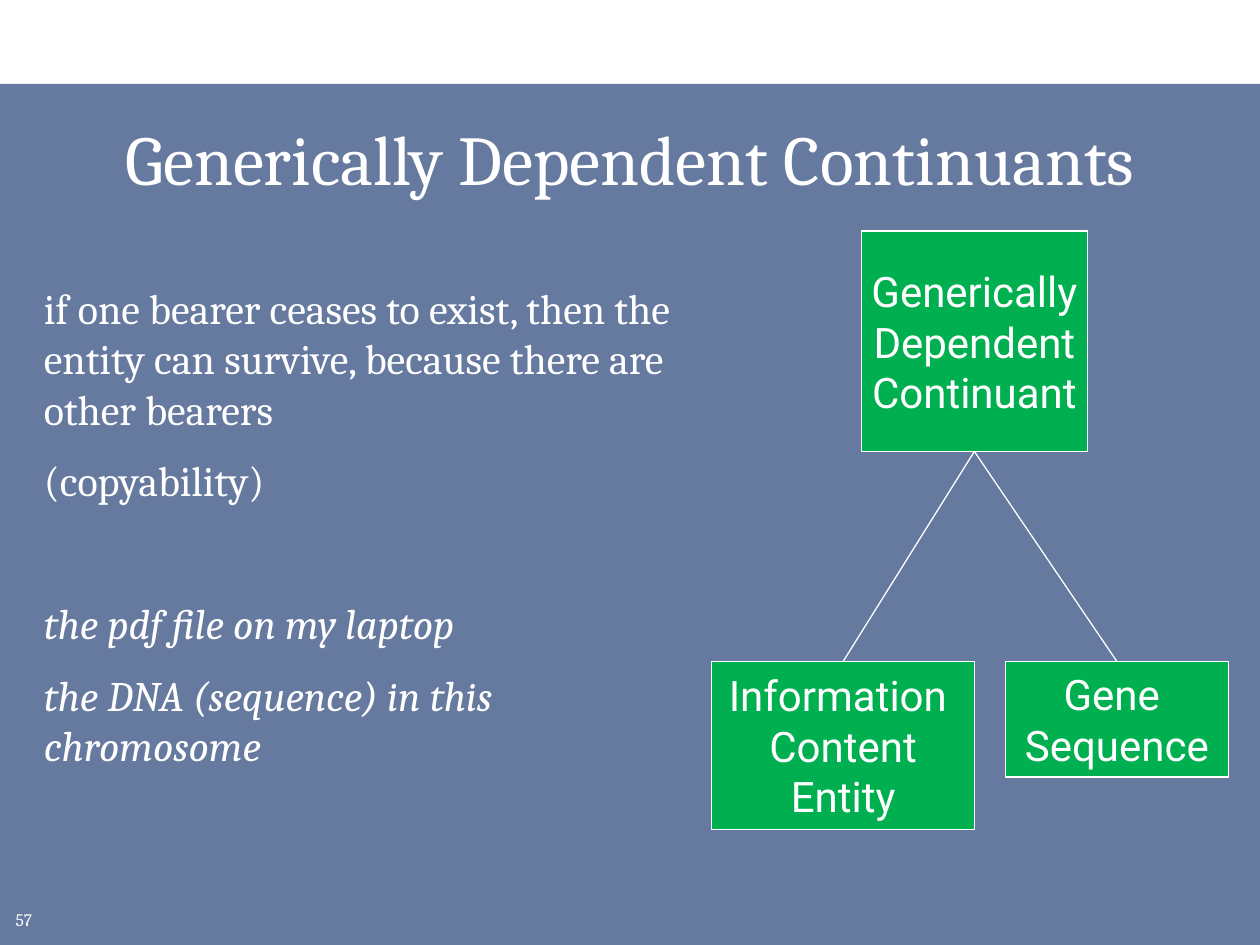
import pptx
import pptx.util
import pptx.dml.color
import pptx.enum.shapes
import pptx.enum.text
import pptx.oxml
import pptx.oxml.ns

COLORS = {"navy": "002060", "green": "00B050", "white": "FFFFFF"}
SERIF, SANS = "Cambria", "Roboto"
COLS, ROWS = 120, 90  # grid of twelfths of an inch
CELL = pptx.util.Inches(1 / 12)
ALIGN = pptx.enum.text.PP_ALIGN
ANCHOR = pptx.enum.text.MSO_ANCHOR
SHAPE = pptx.enum.shapes.MSO_SHAPE


def emu(box):
    """Turn grid units into slide lengths."""
    return [round(v * CELL) for v in box]


def rgb(name):
    return pptx.dml.color.RGBColor.from_string(COLORS[name])


def write(s, lines, size, font, align=ALIGN.LEFT, anchor=ANCHOR.TOP, wrap=True):
    """Fill a shape with one paragraph a line and return the paragraphs."""
    tf = s.text_frame
    tf.text = "\n".join(lines)
    tf.word_wrap = wrap
    tf.vertical_anchor = anchor
    for p in tf.paragraphs:
        p.alignment = align
        for r in p.runs:
            r.font.size = pptx.util.Pt(size)
            r.font.name = font
            r.font.color.rgb = rgb("white")
    return tf.paragraphs


def add_backdrop(slide, box):
    s = slide.shapes.add_shape(SHAPE.RECTANGLE, *emu(box))
    s.shadow.inherit = False
    s.fill.solid()
    s.fill.fore_color.rgb = rgb("navy")
    s.line.fill.background()
    color = s.fill._xPr.find(".//" + pptx.oxml.ns.qn("a:srgbClr"))
    alpha = pptx.oxml.parse_xml(f'<a:alpha {pptx.oxml.ns.nsdecls("a")} val="60000"/>')
    color.append(alpha)


def add_title(slide, box):
    s = slide.shapes.add_textbox(*emu(box))
    write(s, ["Generically Dependent Continuants"], 40, SERIF, ALIGN.CENTER, ANCHOR.MIDDLE)


def add_page_number(slide, box):
    write(slide.shapes.add_textbox(*emu(box)), ["57"], 10, SERIF)


def add_explanation(slide, box):
    """Definition above, examples in italics below."""
    definition = [
        "if one bearer ceases to exist, then the entity can survive, "
        "because there are other bearers",
        "(copyability)",
    ]
    examples = ["the pdf file on my laptop", "the DNA (sequence) in this chromosome"]
    s = slide.shapes.add_textbox(*emu(box))
    paragraphs = write(s, definition + examples, 24, SERIF)
    for p in paragraphs[1:]:
        p.space_before = pptx.util.Pt(12)
    first_example = len(definition)
    paragraphs[first_example].space_before = pptx.util.Pt(53)
    for p in paragraphs[first_example:]:
        for r in p.runs:
            r.font.italic = True


def add_node(slide, box, lines):
    s = slide.shapes.add_shape(SHAPE.RECTANGLE, *emu(box))
    s.shadow.inherit = False
    s.fill.solid()
    s.fill.fore_color.rgb = rgb("green")
    s.line.color.rgb = rgb("white")
    s.line.width = pptx.util.Pt(0.75)
    write(s, lines, 24, SANS, ALIGN.CENTER, ANCHOR.MIDDLE, wrap=False)
    return s


def add_branch(slide, parent, child):
    """Line from the bottom of the parent to the top of the child."""
    line = slide.shapes.add_connector(pptx.enum.shapes.MSO_CONNECTOR.STRAIGHT, 0, 0, 0, 0)
    line.begin_connect(parent, 2)
    line.end_connect(child, 0)
    line.line.color.rgb = rgb("white")
    line.line.width = pptx.util.Pt(0.75)
    effects = pptx.oxml.parse_xml(f'<a:effectLst {pptx.oxml.ns.nsdecls("a")}/>')
    line._element.spPr.append(effects)


def add_tree(slide, box):
    """Root centred over the right edge of the first child."""
    left, top, width, height = box
    root_w, root_h = 21.5, 21
    info_w, info_h = 25, 16
    gene_w, gene_h = 21.25, 11
    child_top = top + height - info_h
    root = add_node(slide, (left + info_w - root_w / 2, top, root_w, root_h),
                    ["Generically", "Dependent", "Continuant"])
    info = add_node(slide, (left, child_top, info_w, info_h),
                    ["Information ", "Content", "Entity"])
    gene = add_node(slide, (left + width - gene_w, child_top, gene_w, gene_h),
                    ["Gene ", "Sequence"])
    for child in (info, gene):
        add_branch(slide, root, child)


def main():
    prs = pptx.Presentation()
    prs.slide_width, prs.slide_height = emu((COLS, ROWS))
    slide = prs.slides.add_slide(prs.slide_layouts[6])
    add_backdrop(slide, (0, 8, COLS, ROWS - 8))
    add_page_number(slide, (0.3, 86, 4.7, 3))
    add_title(slide, (3, 10, COLS - 6, 10))
    add_tree(slide, (67.8, 22, 49.2, 57))
    add_explanation(slide, (3, 26.3, 65, 49.7))
    prs.save("out.pptx")


if __name__ == "__main__":
    main()
